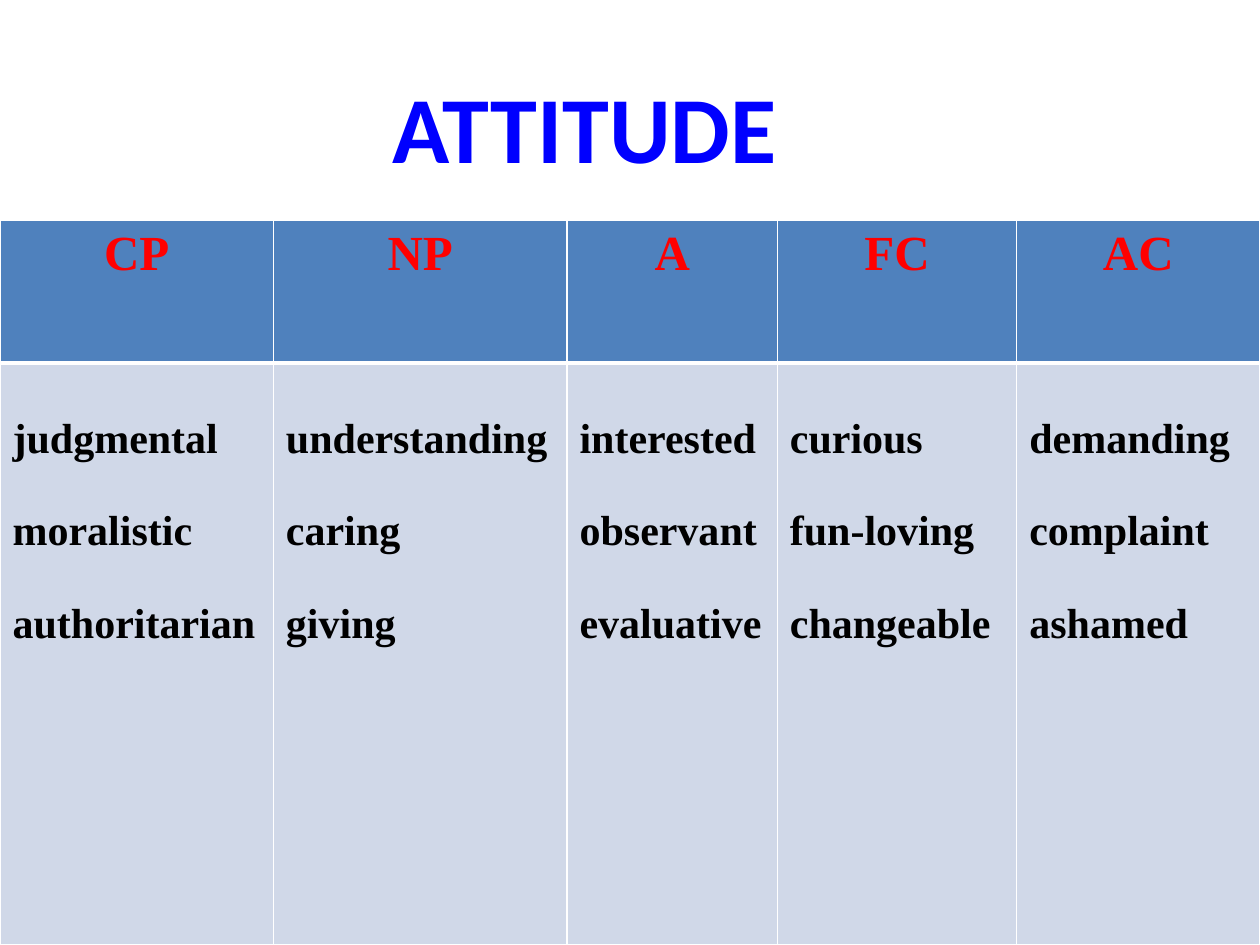
from lxml.etree import SubElement as Sub
from pptx import Presentation
from pptx.dml.color import RGBColor as Rgb
from pptx.enum.text import MSO_AUTO_SIZE as Fit, PP_ALIGN as Align
from pptx.oxml.ns import qn
from pptx.util import Inches, Pt

TITLE = "ATTITUDE"
COLS = [
    ("CP", 2.17, ["judgmental", "moralistic", "authoritarian"]),
    ("NP", 2.33, ["understanding", "caring", "giving"]),
    ("A", 1.67, ["interested", "observant", "evaluative"]),
    ("FC", 1.9, ["curious", "fun-loving", "changeable"]),
    ("AC", 1.93, ["demanding", "complaint", "ashamed"]),
]
ROWS = [1.13, 4.62]
WIDE, HIGH = 10, 7.5

THEME = {
    "title": {"name": "Calibri", "size": Pt(54), "color": "0000FF"},
    "head": {"name": "Times New Roman", "size": Pt(28), "color": "FF0000"},
    "body": {"name": "Times New Roman", "size": Pt(24), "color": "000000"},
    "fills": {"head": "4F81BD", "body": "D0D8E8"},
    "rule": "FFFFFF",
}
PARAS = {
    "title": {"alignment": Align.CENTER},
    "head": {"alignment": Align.CENTER},
    "body": {"alignment": Align.LEFT, "line_spacing": 2.0},
}


def write(frame, lines, kind):
    for i, line in enumerate(lines):
        para = frame.paragraphs[0] if i == 0 else frame.add_paragraph()
        for key, val in PARAS[kind].items():
            setattr(para, key, val)
        run = para.add_run()
        run.text = line
        run.font.bold = True
        for key, val in THEME[kind].items():
            if key == "color":
                run.font.color.rgb = Rgb.from_string(val)
            else:
                setattr(run.font, key, val)


def edge(cell, widths):
    """Draw the cell's borders, with widths in points by side."""
    props = cell._tc.get_or_add_tcPr()
    for side, width in widths.items():
        line = Sub(props, qn(f"a:ln{side}"), w=str(Pt(width)))
        fill = Sub(line, qn("a:solidFill"))
        Sub(fill, qn("a:srgbClr"), val=THEME["rule"])


def style(cell, lines, kind):
    top, base = (1, 3) if kind == "head" else (3, 1)
    edge(cell, {"L": 1, "R": 1, "T": top, "B": base})
    cell.fill.solid()
    cell.fill.fore_color.rgb = Rgb.from_string(THEME["fills"][kind])
    write(cell.text_frame, lines, kind)


def main():
    deck = Presentation()
    deck.slide_width, deck.slide_height = Inches(WIDE), Inches(HIGH)
    slide = deck.slides.add_slide(deck.slide_layouts[6])

    tall = sum(ROWS)
    table = slide.shapes.add_table(
        len(ROWS), len(COLS), 0, Inches(HIGH - tall), Inches(WIDE), Inches(tall)
    ).table
    table.horz_banding = False
    for row, size in zip(table.rows, ROWS):
        row.height = Inches(size)
    for c, (head, width, traits) in enumerate(COLS):
        table.columns[c].width = Inches(width)
        style(table.cell(0, c), [head], "head")
        style(table.cell(1, c), traits, "body")

    box = slide.shapes.add_textbox(Inches(3), Inches(0.5), Inches(3.28), Inches(1.01))
    frame = box.text_frame
    frame.word_wrap = False
    frame.auto_size = Fit.SHAPE_TO_FIT_TEXT
    write(frame, [TITLE], "title")
    deck.save("out.pptx")


if __name__ == "__main__":
    main()
